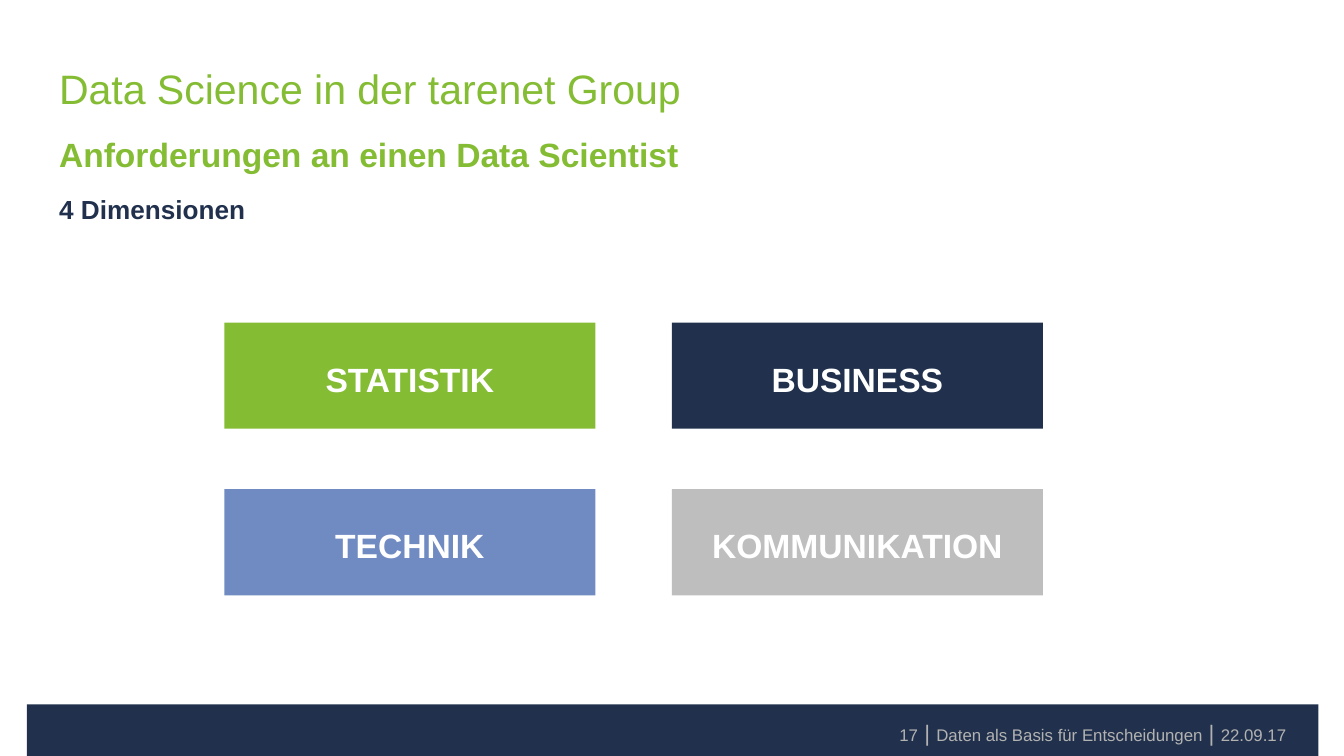
import pptx
import pptx.dml.color
import pptx.enum.shapes
import pptx.enum.text
import pptx.util

Inches = pptx.util.Inches
Pt = pptx.util.Pt
Align = pptx.enum.text.PP_ALIGN
Anchor = pptx.enum.text.MSO_ANCHOR

COLORS = {
    "green": "84BC34",
    "navy": "21314D",
    "blue": "708BC2",
    "gray": "BEBEBE",
    "footer": "B2B2B1",
    "white": "FFFFFF",
}


def rgb(name):
    return pptx.dml.color.RGBColor.from_string(COLORS[name])


def prepare_frame(shape, anchor, wrap=True):
    frame = shape.text_frame
    frame.margin_left = frame.margin_right = 0
    frame.margin_top = frame.margin_bottom = 0
    frame.word_wrap = wrap
    frame.vertical_anchor = anchor
    return frame.paragraphs[0]


def style_font(paragraph, size, color, bold=False):
    paragraph.font.name = "Arial"
    paragraph.font.size = Pt(size)
    paragraph.font.bold = bold
    paragraph.font.color.rgb = rgb(color)


def add_heading(slide, text, top, height, size, color, bold=True, anchor=Anchor.TOP):
    shape = slide.shapes.add_textbox(Inches(0.44), Inches(top), Inches(9.13), Inches(height))
    paragraph = prepare_frame(shape, anchor)
    paragraph.text = text
    style_font(paragraph, size, color, bold)


def add_rectangle(slide, left, top, width, height, color):
    shape = slide.shapes.add_shape(
        pptx.enum.shapes.MSO_SHAPE.RECTANGLE,
        Inches(left), Inches(top), Inches(width), Inches(height),
    )
    shape.shadow.inherit = False
    shape.fill.solid()
    shape.fill.fore_color.rgb = rgb(color)
    shape.line.fill.background()
    return shape


def add_dimension(slide, text, left, top, color):
    shape = add_rectangle(slide, left, top, 2.76, 0.79, color)
    paragraph = prepare_frame(shape, Anchor.MIDDLE)
    paragraph.text = text
    paragraph.alignment = Align.CENTER
    paragraph.line_spacing = Pt(25)
    style_font(paragraph, 18, "white", True)


def add_footer(slide, parts):
    add_rectangle(slide, 0.2, 5.24, 9.61, 0.39, "navy")
    shape = slide.shapes.add_textbox(Inches(3.07), Inches(5.35), Inches(6.5), Inches(0.18))
    paragraph = prepare_frame(shape, Anchor.MIDDLE, wrap=False)
    paragraph.alignment = Align.RIGHT
    paragraph.line_spacing = 1.1
    style_font(paragraph, 9, "footer")
    for index, part in enumerate(parts):
        if index:
            separator = paragraph.add_run()
            separator.text = " | "
            separator.font.size = Pt(12)
        run = paragraph.add_run()
        run.text = part
        run.font.size = Pt(9)


def main():
    presentation = pptx.Presentation()
    presentation.slide_width = Inches(10)
    presentation.slide_height = Inches(10 * 9 / 16)
    slide = presentation.slides.add_slide(presentation.slide_layouts[6])

    add_footer(slide, ["17", "Daten als Basis für Entscheidungen", "22.09.17"])
    add_heading(slide, "Data Science in der tarenet Group", 0, 0.84, 22, "green",
                bold=False, anchor=Anchor.BOTTOM)
    add_heading(slide, "Anforderungen an einen Data Scientist", 1, 0.3, 18, "green")
    add_heading(slide, "4 Dimensionen", 1.44, 0.24, 14, "navy")

    dimensions = [
        ("STATISTIK", "green"),
        ("BUSINESS", "navy"),
        ("TECHNIK", "blue"),
        ("KOMMUNIKATION", "gray"),
    ]
    for index, (text, color) in enumerate(dimensions):
        row, column = divmod(index, 2)
        add_dimension(slide, text, 1.67 + column * 3.33, 2.4 + row * 1.24, color)

    presentation.save("out.pptx")


if __name__ == "__main__":
    main()
